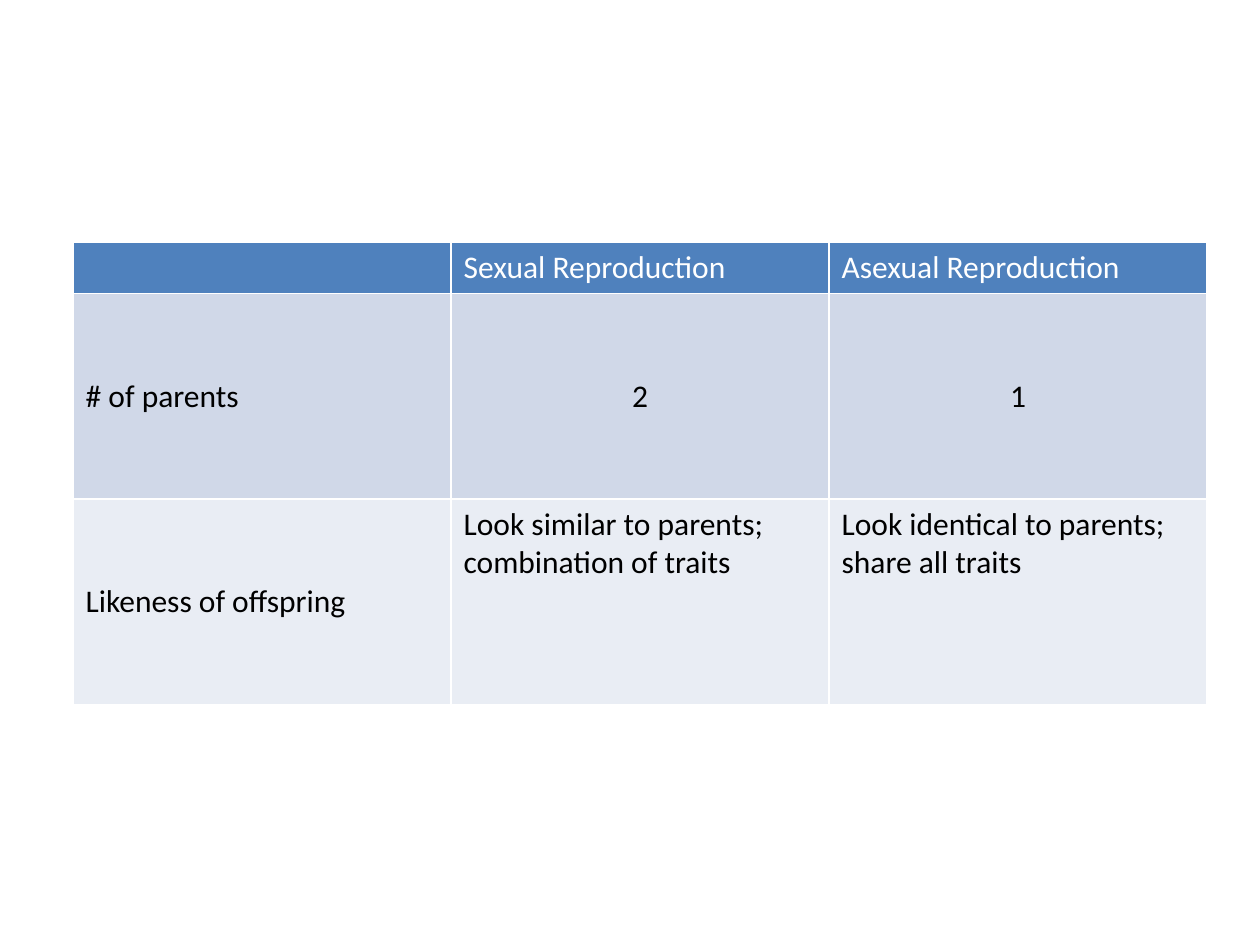
import pptx
import pptx.util
import pptx.dml.color
import pptx.enum.text

WHITE = pptx.dml.color.RGBColor(0xFF, 0xFF, 0xFF)
BLACK = pptx.dml.color.RGBColor(0x00, 0x00, 0x00)
HEADER_BLUE = pptx.dml.color.RGBColor(0x4F, 0x81, 0xBD)
PARENTS_BLUE = pptx.dml.color.RGBColor(0xD0, 0xD8, 0xE8)
LIKENESS_BLUE = pptx.dml.color.RGBColor(0xE9, 0xED, 0xF4)

LEFT = pptx.enum.text.PP_ALIGN.LEFT
CENTER = pptx.enum.text.PP_ALIGN.CENTER
TOP = pptx.enum.text.MSO_ANCHOR.TOP
MIDDLE = pptx.enum.text.MSO_ANCHOR.MIDDLE

COLUMN_WIDTH = 3
ROW_HEIGHTS = [0.41, 1.63, 1.63]
ROW_STYLES = [
    (HEADER_BLUE, WHITE, [(LEFT, TOP)] * 3),
    (PARENTS_BLUE, BLACK, [(LEFT, MIDDLE), (CENTER, MIDDLE), (CENTER, MIDDLE)]),
    (LIKENESS_BLUE, BLACK, [(LEFT, MIDDLE), (LEFT, TOP), (LEFT, TOP)]),
]
COMPARISON = [
    ["", "Sexual Reproduction", "Asexual Reproduction"],
    ["# of parents", "2", "1"],
    [
        "Likeness of offspring",
        "Look similar to parents; combination of traits",
        "Look identical to parents; share all traits",
    ],
]


def fill_cell(cell, wording, background, ink, placement):
    alignment, cell.vertical_anchor = placement
    cell.fill.solid()
    cell.fill.fore_color.rgb = background
    paragraph = cell.text_frame.paragraphs[0]
    paragraph.alignment = alignment
    if wording:
        run = paragraph.add_run()
        run.text = wording
        run.font.name = "Calibri"
        run.font.size = pptx.util.Pt(18)
        run.font.bold = False
        run.font.color.rgb = ink


def add_comparison(slide, left, top):
    columns = len(COMPARISON[0])
    table = slide.shapes.add_table(
        len(COMPARISON),
        columns,
        pptx.util.Inches(left),
        pptx.util.Inches(top),
        pptx.util.Inches(columns * COLUMN_WIDTH),
        pptx.util.Inches(sum(ROW_HEIGHTS)),
    ).table
    for column in table.columns:
        column.width = pptx.util.Inches(COLUMN_WIDTH)
    for row, height, wordings, style in zip(
        table.rows, ROW_HEIGHTS, COMPARISON, ROW_STYLES
    ):
        row.height = pptx.util.Inches(height)
        background, ink, placements = style
        for cell, wording, placement in zip(row.cells, wordings, placements):
            fill_cell(cell, wording, background, ink, placement)


def main():
    deck = pptx.Presentation()
    deck.slide_width = pptx.util.Inches(10)
    deck.slide_height = pptx.util.Inches(7.5)
    slide = deck.slides.add_slide(deck.slide_layouts[6])
    add_comparison(slide, 0.58, 1.92)
    deck.save("out.pptx")


if __name__ == "__main__":
    main()
